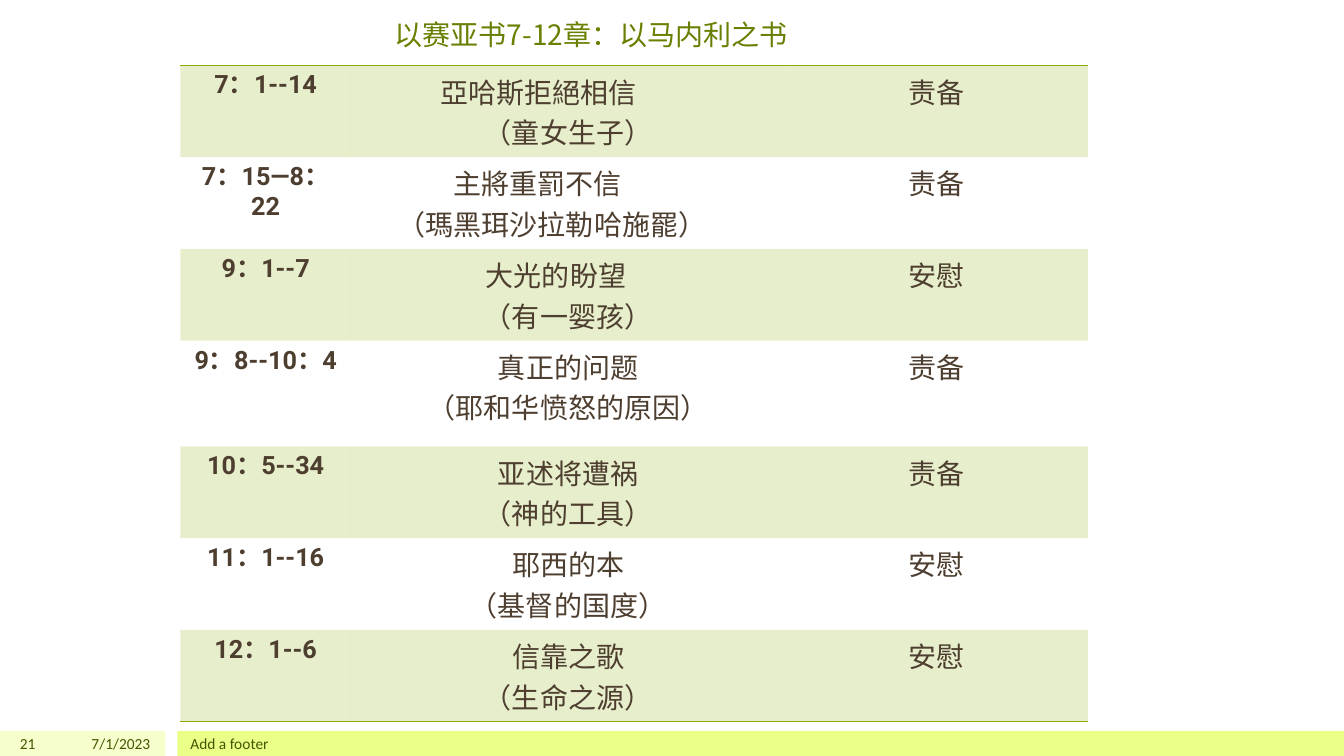
from lxml import etree
from pptx import Presentation
from pptx.dml.color import RGBColor
from pptx.enum import shapes, text
from pptx.oxml import ns
from pptx.util import Inches, Pt

OLIVE = RGBColor(0x8B, 0xAA, 0x00)
TITLE = RGBColor(0x68, 0x80, 0x00)
BROWN = RGBColor(0x4D, 0x3E, 0x2F)
MOSS = RGBColor(0x45, 0x55, 0x00)
PALE = RGBColor(0xF6, 0xFF, 0xCC)
LIME = RGBColor(0xE9, 0xFF, 0x88)
HAN = "Noto Sans CJK SC"
LEFT, MID, RIGHT = text.PP_ALIGN.LEFT, text.PP_ALIGN.CENTER, text.PP_ALIGN.RIGHT
NO_STYLE = "{2D5ABB26-0587-4C30-8999-92F81FD0307C}"

COLS = [1.69, 4.31, 3]
TALL = 3  # index of the taller row
# verses, theme, detail, tone, right inset of the theme cell, indent of the detail
ROWS = [
    ("7：1--14", "亞哈斯拒絕相信", "（童女生子）", "责备", 0.58, 0.58),
    ("7：15—8：22", "主將重罰不信", "（瑪黑珥沙拉勒哈施罷）", "责备", 0.6, 0.28),
    ("9：1--7", "大光的盼望", "（有一婴孩）", "安慰", 0.24, 0.24),
    ("9：8--10：4", "真正的问题", "（耶和华愤怒的原因）", "责备", 0, 0),
    ("10：5--34", "亚述将遭祸", "（神的工具）", "责备", 0, 0),
    ("11：1--16", "耶西的本", "（基督的国度）", "安慰", 0, 0),
    ("12：1--6", "信靠之歌", "（生命之源）", "安慰", 0, 0),
]


def write(frame, *lines, size=20, font=HAN, color=BROWN, bold=False, align=MID):
    """Fill a text frame with one paragraph per line."""
    for i, line in enumerate(lines):
        para = frame.add_paragraph() if i else frame.paragraphs[0]
        para.alignment = align
        run = para.add_run()
        run.text = line
        run.font.size, run.font.bold = Pt(size), bold
        run.font.name = font
        run.font.color.rgb = color
        east = etree.SubElement(run._r.get_or_add_rPr(), ns.qn("a:ea"))
        east.set("typeface", font)


def add_bar(slide, left, width, color):
    bar = slide.shapes.add_shape(
        shapes.MSO_SHAPE.RECTANGLE, Inches(left), Inches(7.25), Inches(width), Inches(0.25))
    bar.shadow.inherit = False
    bar.fill.solid()
    bar.fill.fore_color.rgb = color
    bar.line.fill.background()


def add_note(slide, left, width, words, align):
    """Add one entry of the footer strip."""
    box = slide.shapes.add_textbox(Inches(left), Inches(7.25), Inches(width), Inches(0.25))
    frame = box.text_frame
    frame.word_wrap = True
    frame.vertical_anchor = text.MSO_ANCHOR.MIDDLE
    write(frame, words, size=11, font="Calibri", color=MOSS, align=align)


def add_title(slide, words):
    title = slide.shapes.title
    title.left, title.top = Inches(0.7), Inches(0.12)
    title.width, title.height = Inches(10.33), Inches(0.53)
    title.text_frame.vertical_anchor = text.MSO_ANCHOR.TOP
    write(title.text_frame, words, color=TITLE)


def tint(cell):
    cell.fill.solid()
    cell.fill.fore_color.rgb = OLIVE
    color = cell._tc.tcPr.find(".//" + ns.qn("a:srgbClr"))
    etree.SubElement(color, ns.qn("a:alpha")).set("val", "20000")


def rule(cell, side):
    """Draw the border of a cell: lnT above or lnB below."""
    line = etree.Element(ns.qn("a:" + side), w=str(Pt(1)))
    fill = etree.SubElement(line, ns.qn("a:solidFill"))
    etree.SubElement(fill, ns.qn("a:srgbClr"), val=str(OLIVE))
    cell._tc.get_or_add_tcPr().insert(0, line)


def add_grid(slide):
    heights = [1.05 if i == TALL else 0.91 for i in range(len(ROWS))]
    grid = slide.shapes.add_table(
        len(ROWS), len(COLS), Inches(1.79), Inches(0.65),
        Inches(sum(COLS)), Inches(sum(heights))).table
    grid.first_row = grid.horz_banding = False
    grid._tbl.tblPr.find(ns.qn("a:tableStyleId")).text = NO_STYLE
    for col, width in zip(grid.columns, COLS):
        col.width = Inches(width)
    for i, (verse, theme, detail, tone, inset, indent) in enumerate(ROWS):
        grid.rows[i].height = Inches(heights[i])
        first, middle, last = cells = [grid.cell(i, j) for j in range(len(COLS))]
        write(first.text_frame, verse, size=18, font="Roboto", bold=True)
        write(middle.text_frame, theme, detail)
        write(last.text_frame, tone)
        middle.margin_right = Inches(0.1 + inset)
        middle.text_frame.paragraphs[1]._p.get_or_add_pPr().set("marL", str(Inches(indent)))
        for cell in cells:
            if i % 2 == 0:
                tint(cell)
            if i == 0:
                rule(cell, "lnT")
            if i == len(ROWS) - 1:
                rule(cell, "lnB")


def main():
    deck = Presentation()
    deck.slide_width, deck.slide_height = Inches(13.33), Inches(7.5)
    slide = deck.slides.add_slide(deck.slide_layouts[5])
    add_bar(slide, 0, 1.64, PALE)
    add_bar(slide, 1.76, 11.57, LIME)
    add_note(slide, 0, 0.45, "21", RIGHT)
    add_note(slide, 0.5, 1.09, "7/1/2023", RIGHT)
    add_note(slide, 1.79, 10, "Add a footer", LEFT)
    add_title(slide, "以赛亚书7-12章：以马内利之书")
    add_grid(slide)
    deck.save("out.pptx")


if __name__ == "__main__":
    main()
